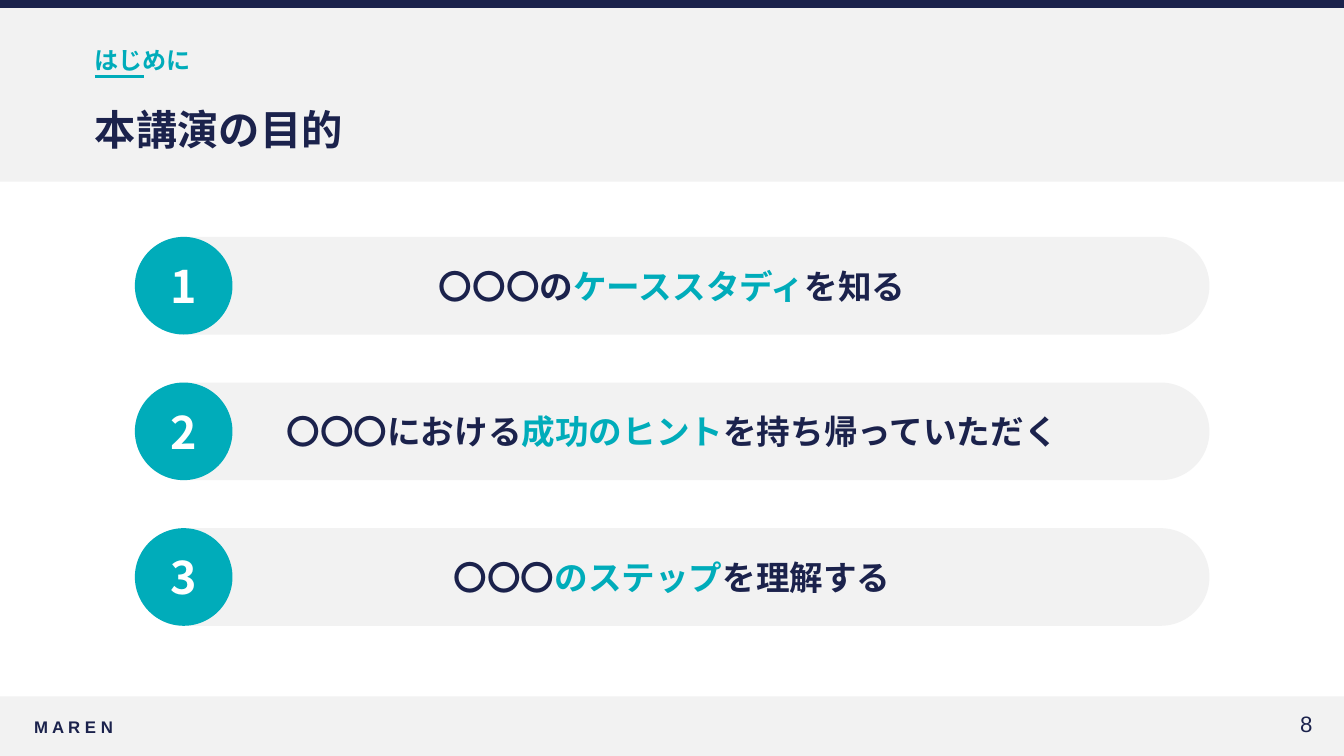
from dataclasses import dataclass

from lxml import etree
from pptx import Presentation
from pptx import util as u
from pptx.dml.color import RGBColor
from pptx.enum import shapes, text
from pptx.oxml.ns import qn

LEFT, MID, RIGHT = text.PP_ALIGN.LEFT, text.PP_ALIGN.CENTER, text.PP_ALIGN.RIGHT
RECT, PILL, DISC = (shapes.MSO_SHAPE.RECTANGLE, shapes.MSO_SHAPE.ROUNDED_RECTANGLE,
                    shapes.MSO_SHAPE.OVAL)


@dataclass(frozen=True)
class Theme:
    navy: str = "1B224C"
    teal: str = "00ACBA"
    grey: str = "F2F2F2"
    white: str = "FFFFFF"
    latin: str = "Arial"
    asian: str = "Noto Sans CJK JP"
    title: float = 29.5
    label: float = 17.2
    goal: float = 24
    badge: float = 32
    page: float = 15.9
    brand: float = 12


class Deck:
    def __init__(self, theme, width, height):
        self.theme = theme
        self.prs = Presentation()
        self.prs.slide_width, self.prs.slide_height = u.Cm(width), u.Cm(height)
        self.slide = self.prs.slides.add_slide(self.prs.slide_layouts[5])

    def label(self, shape, runs, size, color, font, align=MID, bold=True,
              pad=None, anchor=text.MSO_ANCHOR.MIDDLE):
        """Fill a shape with one paragraph of (words, colour or None) runs."""
        frame = shape.text_frame
        frame.word_wrap = True
        frame.auto_size = text.MSO_AUTO_SIZE.NONE
        frame.vertical_anchor = anchor
        if pad is not None:
            frame.margin_left = frame.margin_right = u.Cm(pad)
            frame.margin_top = frame.margin_bottom = u.Cm(pad)
        para = frame.paragraphs[0]
        para.alignment = align
        para.font.size, para.font.bold, para.font.name = u.Pt(size), bold, font
        para.font.color.rgb = RGBColor.from_string(color)
        props = para._p.find(".//" + qn("a:defRPr"))
        etree.SubElement(props, qn("a:ea")).set("typeface", self.theme.asian)
        for words, tint in runs:
            run = para.add_run()
            run.text = words
            if tint:
                run.font.color.rgb = RGBColor.from_string(tint)
        return para

    def shape(self, kind, box, color, home=None):
        item = (home or self.slide).shapes.add_shape(kind, *map(u.Cm, box))
        item.shadow.inherit = False
        item.fill.solid()
        item.fill.fore_color.rgb = RGBColor.from_string(color)
        item.line.fill.background()
        return item

    def rule(self, left, right, top, color, width):
        line = self.slide.shapes.add_connector(
            shapes.MSO_CONNECTOR.STRAIGHT, u.Cm(left), u.Cm(top), u.Cm(right), u.Cm(top))
        line.line.color.rgb = RGBColor.from_string(color)
        line.line.width = u.Pt(width)
        etree.SubElement(line._element.spPr, qn("a:effectLst"))

    def note(self, box, words, size, color, font, **style):
        item = self.slide.shapes.add_textbox(*map(u.Cm, box))
        return self.label(item, [(words, None)], size, color, font, pad=0.1, **style)

    def title(self, box, words):
        item = self.slide.shapes.title
        item.left, item.top, item.width, item.height = map(u.Cm, box)
        self.label(item, [(words, None)], self.theme.title, self.theme.navy,
                   self.theme.asian, LEFT, pad=0.1)
        # Bring the title in front of the header band
        self.slide.shapes._spTree.append(item._element)

    def goal(self, box, number, runs):
        """Draw a pill with a numbered disc at its left end."""
        t = self.theme
        left, top, _, size = box
        group = self.slide.shapes.add_group_shape()
        pill = self.shape(PILL, box, t.grey, group)
        pill.adjustments[0] = 0.5
        self.label(pill, runs, t.goal, t.navy, t.latin)
        disc = self.shape(DISC, (left, top, size, size), t.teal, group)
        self.label(disc, [(str(number), None)], t.badge, t.white, t.asian)


def main():
    t = Theme()
    wide, high = 33.87, 19.05
    deck = Deck(t, wide, high)

    foot = 17.55
    deck.shape(RECT, (0, foot, wide, high - foot), t.grey)
    deck.shape(RECT, (0, 0, wide, 4.58), t.grey)
    deck.rule(2.39, 3.63, 1.93, t.teal, 2.5)
    deck.shape(RECT, (0, 0, wide, 0.2), t.navy)

    deck.note((2.29, 1.04, 29.29, 0.71), "はじめに", t.label, t.teal, t.asian,
              align=LEFT, anchor=text.MSO_ANCHOR.TOP)
    deck.title((2.29, 2.49, 29.29, 1.5), "本講演の目的")

    goals = [
        ("〇〇〇の", "ケーススタディ", "を知る"),
        ("〇〇〇における", "成功のヒント", "を持ち帰っていただく"),
        ("〇〇〇", "のステップ", "を理解する"),
    ]
    top, step = 5.97, 3.67
    for i, (head, key, tail) in enumerate(goals):
        deck.goal((3.4, top + i * step, 27.08, 2.46), i + 1,
                  [(head, None), (key, t.teal), (tail, None)])

    deck.note((0.76, 17.91, 2.72, 0.79), "M A R E N", t.brand, t.navy, t.latin,
              align=LEFT)
    page = deck.note((29.85, 17.91, 3.33, 0.79), "8", t.page, t.navy, t.latin,
                     align=RIGHT, bold=False)
    page.line_spacing = 0.8
    deck.prs.save("out.pptx")


if __name__ == "__main__":
    main()
